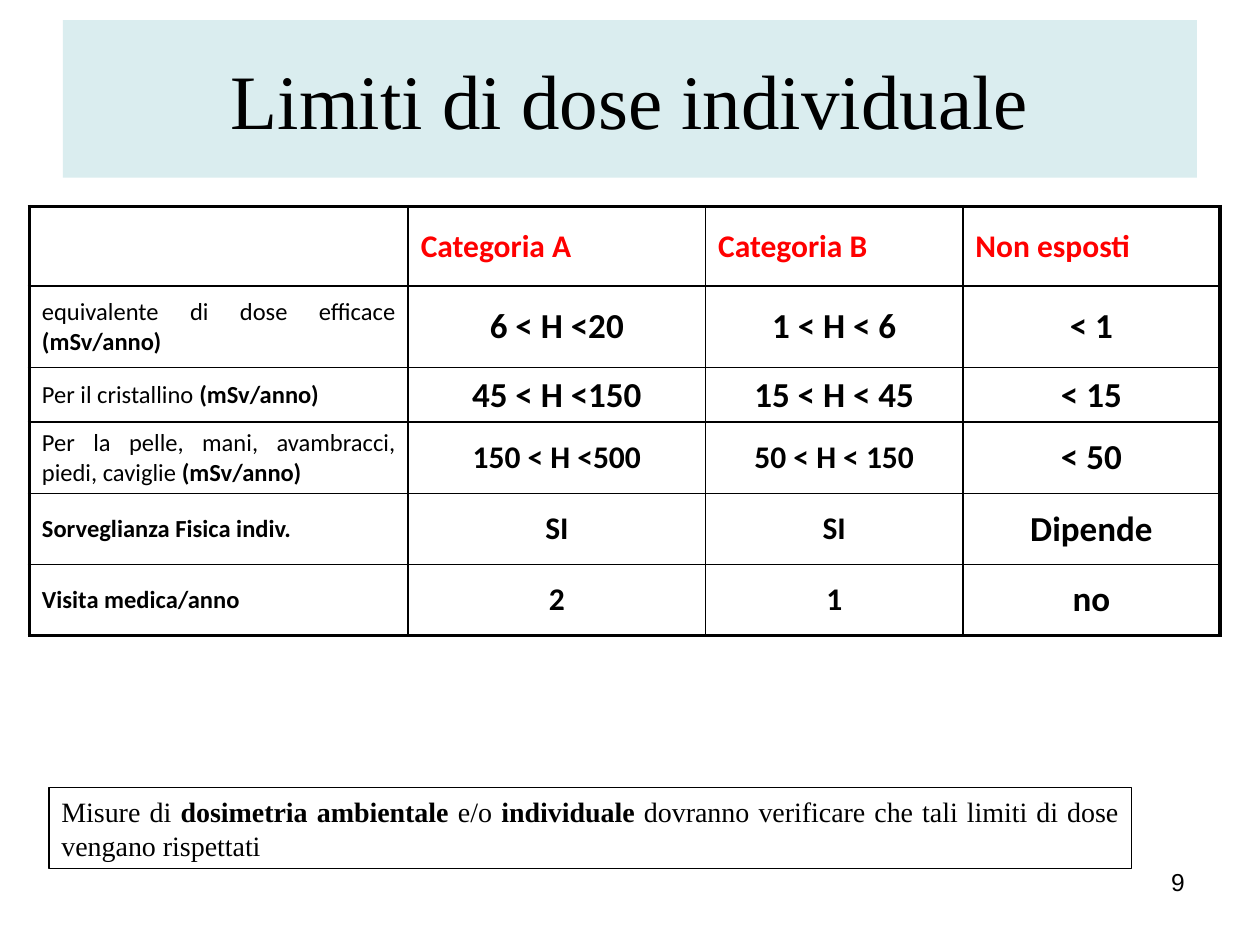
from lxml.etree import SubElement as Sub
from pptx import Presentation
from pptx.dml.color import RGBColor
from pptx.enum.shapes import MSO_SHAPE as Shape
from pptx.enum.text import MSO_ANCHOR as Anchor, PP_ALIGN as Align
from pptx.oxml.ns import qn
from pptx.util import Pt

BLACK = RGBColor(0, 0, 0)
RED = RGBColor(0xFF, 0, 0)
PALE = RGBColor(0xDA, 0xED, 0xEF)

SERIF, SANS, BODY = "Times New Roman", "Arial", "Calibri"
THIN, THICK = Pt(1), Pt(2.25)

COLS = (216.5, 170, 147, 147)
ROWS = (45.5, 46.5, 29, 40.5, 40.5, 40.5)

# Text between asterisks is bold
DATA = (
    ("", "*Categoria A*", "*Categoria B*", "*Non esposti*"),
    ("equivalente di dose efficace *(mSv/anno)*",
     "*6 < H <20*", "*1 < H < 6*", "*< 1*"),
    ("Per il cristallino *(mSv/anno)*",
     "*45 < H <150*", "*15 < H < 45*", "*< 15*"),
    ("Per la pelle, mani, avambracci, piedi, caviglie *(mSv/anno)*",
     "*150 < H <500*", "*50 < H < 150*", "*< 50*"),
    ("*Sorveglianza Fisica indiv.*", "*SI*", "*SI*", "*Dipende*"),
    ("*Visita medica/anno*", "*2*", "*1*", "*no*"),
)
NOTE = ("Misure di *dosimetria ambientale* e/o *individuale* dovranno "
        "verificare che tali limiti di dose vengano rispettati")


def write(frame, text, align, name, size, color=BLACK):
    frame.word_wrap = True
    para = frame.paragraphs[0]
    para.alignment = align
    for i, part in enumerate(text.split("*")):
        if not part:
            continue
        run = para.add_run()
        run.text = part
        look = {"name": name, "size": Pt(size), "bold": i % 2 == 1}
        for key, value in look.items():
            setattr(run.font, key, value)
        run.font.color.rgb = color


def add_box(slide, area, fill=None, line=None):
    box = slide.shapes.add_shape(Shape.RECTANGLE, *map(Pt, area))
    box.shadow.inherit = False
    if fill is None:
        box.fill.background()
    else:
        box.fill.solid()
        box.fill.fore_color.rgb = fill
    if line is None:
        box.line.fill.background()
    else:
        box.line.color.rgb = BLACK
        box.line.width = Pt(line)
    box.text_frame.vertical_anchor = Anchor.MIDDLE
    return box.text_frame


def add_edge(cell, side, width):
    line = Sub(cell._tc.get_or_add_tcPr(), qn("a:" + side), w=str(width))
    fill = Sub(line, qn("a:solidFill"))
    Sub(fill, qn("a:srgbClr"), val=str(BLACK))


def style(row, col):
    """Alignment, size and colour of the text in a cell."""
    if row == 0:
        return Align.JUSTIFY, 18, RED
    if col == 0:
        return Align.JUSTIFY, 14, BLACK
    big = row < 3 or col == 3
    return Align.CENTER, 20 if big else 18, BLACK


def add_grid(slide, left, top):
    rows, cols = len(ROWS), len(COLS)
    area = map(Pt, (left, top, sum(COLS), sum(ROWS)))
    grid = slide.shapes.add_table(rows, cols, *area).table
    grid.first_row = grid.horz_banding = False
    for col, width in zip(grid.columns, COLS):
        col.width = Pt(width)
    for row, height in zip(grid.rows, ROWS):
        row.height = Pt(height)
    for r, texts in enumerate(DATA):
        for c, text in enumerate(texts):
            cell = grid.cell(r, c)
            # Thick lines only on the outer frame
            outer = {"lnL": c == 0, "lnR": c == cols - 1,
                     "lnT": r == 0, "lnB": r == rows - 1}
            for side, thick in outer.items():
                add_edge(cell, side, THICK if thick else THIN)
            cell.fill.background()
            cell.vertical_anchor = Anchor.MIDDLE
            align, size, color = style(r, c)
            write(cell.text_frame, text, align, BODY, size, color)


def main():
    deck = Presentation()
    deck.slide_width, deck.slide_height = Pt(720), Pt(540)
    slide = deck.slides.add_slide(deck.slide_layouts[6])

    # Title band
    title = add_box(slide, (36, 11.5, 648, 90), fill=PALE)
    write(title, "Limiti di dose individuale", Align.CENTER, SERIF, 44)

    # Page number
    page = slide.shapes.add_textbox(*map(Pt, (516, 492, 168, 37.5)))
    write(page.text_frame, "9", Align.RIGHT, SANS, 14)

    # Dose limits
    add_grid(slide, 16.75, 118)

    # Closing note
    note = add_box(slide, (28, 450, 618.5, 46.5), line=0.75)
    write(note, NOTE, Align.JUSTIFY, SERIF, 16)

    deck.save("out.pptx")


if __name__ == "__main__":
    main()
